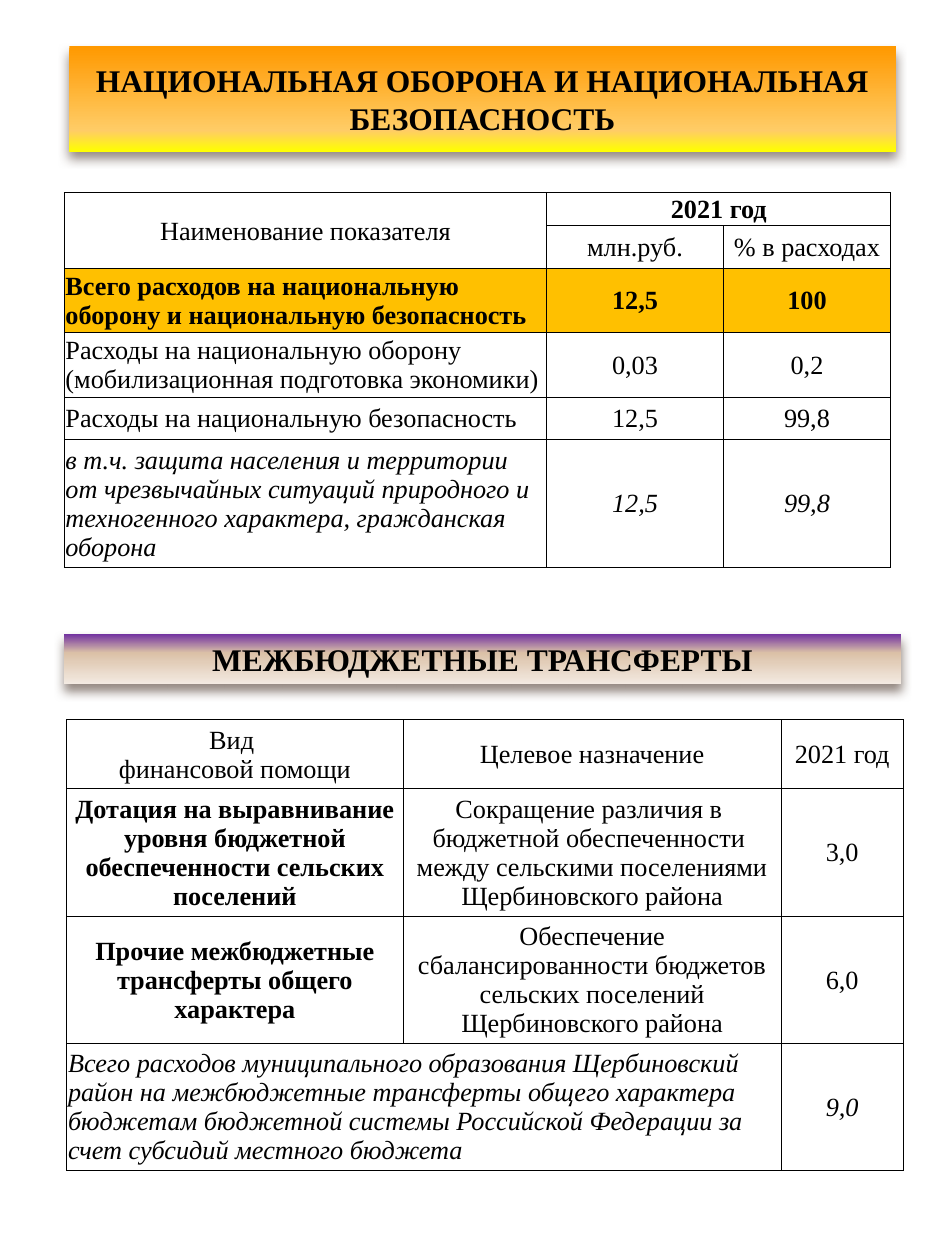
import dataclasses
import typing

import lxml.etree
import pptx
import pptx.dml.color
import pptx.enum.shapes
import pptx.enum.text
import pptx.oxml.ns
import pptx.util

RGB = pptx.dml.color.RGBColor
BLACK = RGB(0x00, 0x00, 0x00)
GOLD = RGB(0xFF, 0xC0, 0x00)
SHADE = RGB(0x4E, 0x3B, 0x30)
FLAME = ((0, RGB(0xFF, 0x99, 0x00)), (80, RGB(0xFF, 0xCC, 0x66)), (100, RGB(0xFF, 0xFF, 0x00)))
DUSK = ((0, RGB(0x70, 0x30, 0xA0)), (38, RGB(0xDB, 0xC1, 0xA7)), (100, RGB(0xF3, 0xEA, 0xE2)))

WIDE, HIGH = pptx.util.Inches(7.5), pptx.util.Inches(10)
COLS, ROWS = 75, 100
MID = pptx.enum.text.PP_ALIGN.CENTER
LEFT = pptx.enum.text.PP_ALIGN.LEFT
qn = pptx.oxml.ns.qn


@dataclasses.dataclass
class Box:
    x: float
    y: float
    w: float
    h: float


@dataclasses.dataclass
class Cell:
    row: int
    col: int
    text: str
    side: int = MID
    font: dict = dataclasses.field(default_factory=dict)
    down: int = 1
    across: int = 1


@dataclasses.dataclass
class Grid:
    x: float
    y: float
    cols: tuple
    rows: tuple
    cells: list
    gold: typing.Optional[int] = None


BASE = {"name": "Times New Roman", "size": pptx.util.Pt(15), "bold": False, "italic": False}
HEAD = {**BASE, "size": pptx.util.Pt(18), "bold": True}
BOLD = {"bold": True}
SLANT = {"italic": True}
INSET = pptx.util.Inches(0.01)
FRAME = {"margin_left": INSET, "margin_right": INSET, "margin_top": INSET, "margin_bottom": 0,
         "vertical_anchor": pptx.enum.text.MSO_ANCHOR.MIDDLE}


def across(n: float) -> int:
    return round(WIDE * n / COLS)


def down(n: float) -> int:
    return round(HIGH * n / ROWS)


def apply(thing, form: dict) -> None:
    for key, val in form.items():
        setattr(thing, key, val)


def add(root, tag: str, **form):
    return lxml.etree.SubElement(root, qn(tag), {k: str(v) for k, v in form.items()})


def write(frame, text: str, side: int, form: dict) -> None:
    for i, line in enumerate(text.split("\n")):
        para = frame.add_paragraph() if i else frame.paragraphs[0]
        para.alignment = side
        run = para.add_run()
        run.text = line
        apply(run.font, form)
        run.font.color.rgb = BLACK


def banner(shape, box: Box, text: str, stops: tuple) -> None:
    apply(shape, {"left": across(box.x), "top": down(box.y),
                  "width": across(box.w), "height": down(box.h)})
    shape.fill.gradient()
    shape.fill.gradient_angle = 270
    marks = shape.element.spPr.find(".//" + qn("a:gsLst"))
    marks.clear()
    for pos, tint in stops:
        add(add(marks, "a:gs", pos=pos * 1000), "a:srgbClr", val=tint)
    shape.line.fill.background()
    shape.shadow.inherit = False
    glow = add(shape.element.spPr.find(qn("a:effectLst")), "a:outerShdw",
               blurRad=pptx.util.Pt(6), dist=pptx.util.Pt(4), dir=5400000, rotWithShape=0)
    add(add(glow, "a:srgbClr", val=SHADE), "a:alpha", val=60000)
    apply(shape.text_frame, {"word_wrap": True,
                             "auto_size": pptx.enum.text.MSO_AUTO_SIZE.SHAPE_TO_FIT_TEXT,
                             "vertical_anchor": pptx.enum.text.MSO_ANCHOR.MIDDLE})
    write(shape.text_frame, text, MID, HEAD)


def border(cell) -> None:
    props = cell._tc.get_or_add_tcPr()
    for side in "LRTB":
        line = add(props, "a:ln" + side, w=pptx.util.Pt(0.5))
        add(add(line, "a:solidFill"), "a:srgbClr", val=BLACK)


def table(slide, grid: Grid) -> None:
    tab = slide.shapes.add_table(len(grid.rows), len(grid.cols), across(grid.x), down(grid.y),
                                 across(sum(grid.cols)), down(sum(grid.rows))).table
    apply(tab, {"first_row": False, "horz_banding": False})
    for col, size in zip(tab.columns, grid.cols):
        col.width = across(size)
    for r, size in enumerate(grid.rows):
        tab.rows[r].height = down(size)
        for cell in tab.rows[r].cells:
            apply(cell, FRAME)
            border(cell)
            if r == grid.gold:
                cell.fill.solid()
                cell.fill.fore_color.rgb = GOLD
            else:
                cell.fill.background()
    for item in grid.cells:
        cell = tab.cell(item.row, item.col)
        if item.down * item.across > 1:
            cell.merge(tab.cell(item.row + item.down - 1, item.col + item.across - 1))
        write(cell.text_frame, item.text, item.side, {**BASE, **item.font})


def entry(row: int, name: str, sum_: str, part: str, font: dict) -> list:
    return [Cell(row, 0, name, LEFT, font), Cell(row, 1, sum_, MID, font),
            Cell(row, 2, part, MID, font)]


def grant(row: int, name: str, goal: str, sum_: str) -> list:
    return [Cell(row, 0, name, MID, BOLD), Cell(row, 1, goal), Cell(row, 2, sum_)]


GUARD = Grid(5.1, 15.3, (38.3, 14, 13.3), (2.5, 3.4, 5.1, 5.1, 3.4, 10.1), [
    Cell(0, 0, "Наименование показателя", down=2),
    Cell(0, 1, "2021 год", font=BOLD, across=2),
    Cell(1, 1, "млн.руб."),
    Cell(1, 2, "% в расходах"),
    *entry(2, "Всего расходов на национальную оборону и национальную безопасность",
           "12,5", "100", BOLD),
    *entry(3, "Расходы на национальную оборону (мобилизационная подготовка экономики)",
           "0,03", "0,2", {}),
    *entry(4, "Расходы на национальную безопасность", "12,5", "99,8", {}),
    *entry(5, "в т.ч. защита населения и территории от чрезвычайных ситуаций природного и "
           "техногенного характера, гражданская оборона", "12,5", "99,8", SLANT),
], gold=2)

GRANTS = Grid(5.3, 57.1, (26.7, 30, 9.7), (5.5, 10.1, 10.1, 10.1), [
    Cell(0, 0, "Вид \nфинансовой помощи"),
    Cell(0, 1, "Целевое назначение"),
    Cell(0, 2, "2021 год"),
    *grant(1, "Дотация на выравнивание уровня бюджетной обеспеченности сельских поселений",
           "Сокращение различия в \nбюджетной обеспеченности \n"
           "между сельскими поселениями Щербиновского района", "3,0"),
    *grant(2, "Прочие межбюджетные трансферты общего характера",
           "Обеспечение сбалансированности бюджетов сельских поселений "
           "Щербиновского района", "6,0"),
    Cell(3, 0, "Всего расходов муниципального образования Щербиновский район на межбюджетные "
         "трансферты общего характера бюджетам бюджетной системы Российской Федерации за счет "
         "субсидий местного бюджета", LEFT, SLANT, across=2),
    Cell(3, 2, "9,0", font=SLANT),
])


def main() -> None:
    deck = pptx.Presentation()
    apply(deck, {"slide_width": WIDE, "slide_height": HIGH})
    slide = deck.slides.add_slide(deck.slide_layouts[5])
    banner(slide.shapes.title, Box(5.5, 4.3, 65.6, 7.1),
           "НАЦИОНАЛЬНАЯ ОБОРОНА И НАЦИОНАЛЬНАЯ БЕЗОПАСНОСТЬ", FLAME)
    table(slide, GUARD)
    plate = slide.shapes.add_shape(pptx.enum.shapes.MSO_SHAPE.RECTANGLE, 0, 0, 0, 0)
    banner(plate, Box(5.1, 50.3, 66.4, 4), "МЕЖБЮДЖЕТНЫЕ ТРАНСФЕРТЫ", DUSK)
    table(slide, GRANTS)
    deck.save("out.pptx")


if __name__ == "__main__":
    main()
